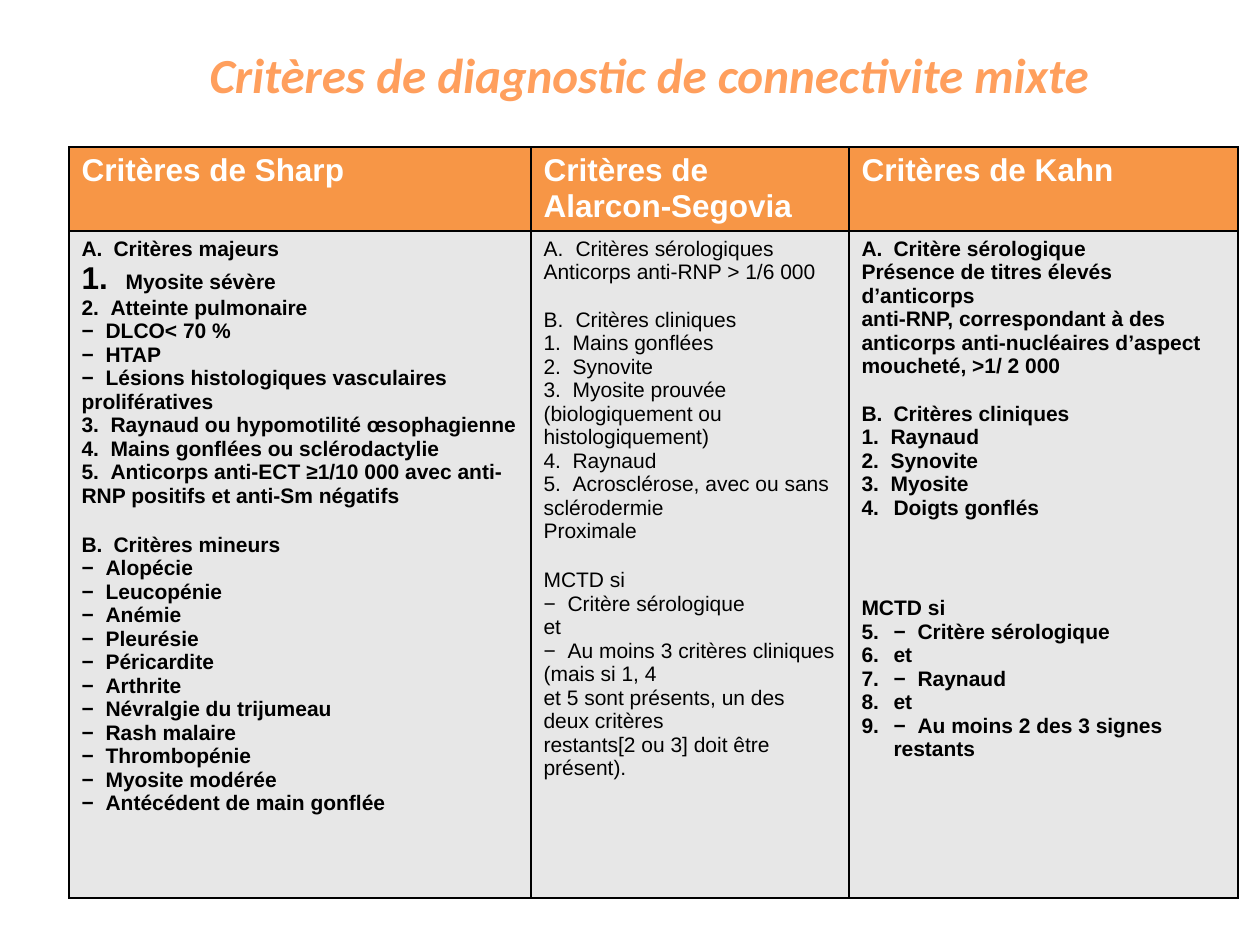
"""Build the slide on diagnostic criteria for mixed connective tissue disease."""
from dataclasses import dataclass

from lxml import etree
from pptx import Presentation, util as u
from pptx.dml.color import RGBColor
from pptx.enum import text as t
from pptx.oxml import ns

SCALE = 914400 / 126
HUES = {"head": "F79646", "body": "E7E7E7", "white": "FFFFFF", "black": "000000",
        "pale": "FFA367", "mid": "FF9F5D", "deep": "F38E3A"}
TABS = {"A.": 32, "B.": 32, "−": 24}


@dataclass
class Line:
    text: str
    mark: str = ""
    gap: float = 0
    size: int = 12
    tab: int = 29
    auto: int = 0


@dataclass
class Column:
    head: str
    width: int
    bold: bool
    lines: list[Line]


def dashes(*names: str) -> list[Line]:
    return [Line(name, "−") for name in names]


def steps(*names: str) -> list[Line]:
    return [Line(name, f"{i}.") for i, name in enumerate(names, 1)]


COLUMNS = [
    Column("Critères de Sharp", 462, True, [
        Line("Critères majeurs", "A."),
        Line("Myosite sévère", "1.", size=18, tab=44),
        Line("Atteinte pulmonaire", "2."),
        *dashes("DLCO< 70 %", "HTAP", "Lésions histologiques vasculaires"),
        Line("prolifératives"),
        Line("Raynaud ou hypomotilité œsophagienne", "3."),
        Line("Mains gonflées ou sclérodactylie", "4."),
        Line("Anticorps anti-ECT ≥1/10 000 avec anti-", "5."),
        Line("RNP positifs et anti-Sm négatifs"),
        Line("Critères mineurs", "B.", gap=14.5),
        *dashes("Alopécie", "Leucopénie", "Anémie", "Pleurésie", "Péricardite",
                "Arthrite", "Névralgie du trijumeau", "Rash malaire",
                "Thrombopénie", "Myosite modérée", "Antécédent de main gonflée"),
    ]),
    Column("Critères de Alarcon-Segovia", 318, False, [
        Line("Critères sérologiques", "A."),
        Line("Anticorps anti-RNP > 1/6 000"),
        Line("Critères cliniques", "B.", gap=13.5),
        *steps("Mains gonflées", "Synovite", "Myosite prouvée (biologiquement ou"),
        Line("histologiquement)"),
        Line("Raynaud", "4."),
        Line("Acrosclérose, avec ou sans sclérodermie", "5."),
        Line("Proximale"),
        Line("MCTD si", gap=14.5),
        Line("Critère sérologique", "−"),
        Line("et"),
        Line("Au moins 3 critères cliniques (mais si 1, 4", "−"),
        Line("et 5 sont présents, un des deux critères"),
        Line("restants[2 ou 3] doit être présent)."),
    ]),
    Column("Critères de Kahn", 389, True, [
        Line("Critère sérologique", "A."),
        Line("Présence de titres élevés d’anticorps"),
        Line("anti-RNP, correspondant à des"),
        Line("anticorps anti-nucléaires d’aspect"),
        Line("moucheté, >1/ 2 000"),
        Line("Critères cliniques", "B.", gap=13.5),
        *steps("Raynaud", "Synovite", "Myosite"),
        Line("Doigts gonflés", auto=4),
        Line("MCTD si", gap=44),
        Line("Critère sérologique", "−", auto=4),
        Line("et", auto=4),
        Line("Raynaud", "−", auto=4),
        Line("et", auto=4),
        Line("Au moins 2 des 3 signes restants", "−", auto=4),
    ]),
]


def px(n: int) -> int:
    return round(n * SCALE)


def add(node, tag: str, **attrs):
    return etree.SubElement(node, ns.qn(tag), {k: str(v) for k, v in attrs.items()})


def write(para, text: str, size=12, face="Arial", hue="black", bold=False, slant=False):
    run = para.add_run()
    run.text = text
    font = run.font
    font.size, font.name, font.bold, font.italic = u.Pt(size), face, bold, slant
    font.color.rgb = RGBColor.from_string(HUES[hue])
    return run


def shade(run) -> None:
    run.font.fill.gradient()
    grad = run.font.fill._xPr.find(ns.qn("a:gradFill"))
    for child in list(grad):
        grad.remove(child)
    stops = add(grad, "a:gsLst")
    for i, hue in enumerate(["pale", "mid", "deep", "mid", "pale"]):
        add(add(stops, "a:gs", pos=i * 25000), "a:srgbClr", val=HUES[hue])
    add(grad, "a:lin", ang=5400000, scaled=0)


def paint(cell, hue: str) -> None:
    props = cell._tc.get_or_add_tcPr()
    for side in "LRTB":
        edge = add(props, f"a:ln{side}", w=u.Pt(1))
        add(add(edge, "a:solidFill"), "a:srgbClr", val=HUES["black"])
    cell.fill.solid()
    cell.fill.fore_color.rgb = RGBColor.from_string(HUES[hue])


def fill(frame, lines: list[Line], bold: bool) -> None:
    for i, line in enumerate(lines):
        para = frame.add_paragraph() if i else frame.paragraphs[0]
        if line.gap:
            para.space_before = u.Pt(line.gap)
        props = para._p.get_or_add_pPr()
        base = 0
        if line.auto:
            base = 32
            props.set("marL", str(px(base)))
            props.set("indent", str(-px(base)))
            add(props, "a:buFont", typeface="+mj-lt")
            add(props, "a:buAutoNum", type="arabicPeriod", startAt=line.auto)
        if line.mark:
            stop = base + TABS.get(line.mark, line.tab)
            add(add(props, "a:tabLst"), "a:tab", pos=px(stop), algn="l")
            write(para, line.mark + "\t", size=line.size, bold=bold)
        write(para, line.text, bold=bold)


def title(slide) -> None:
    box = slide.shapes.title
    box.left, box.top, box.width, box.height = map(px, (197, 38, 926, 72))
    frame = box.text_frame
    frame.word_wrap = False
    frame.auto_size = t.MSO_AUTO_SIZE.NONE
    frame.vertical_anchor = t.MSO_ANCHOR.TOP
    para = frame.paragraphs[0]
    para.alignment = t.PP_ALIGN.LEFT
    shade(write(para, "Critères de diagnostic de connectivite mixte", size=28,
                face="Calibri", hue="mid", bold=True, slant=True))


def grid(slide) -> None:
    wide = sum(col.width for col in COLUMNS)
    table = slide.shapes.add_table(2, len(COLUMNS), *map(px, (69, 147, wide, 751))).table
    table.horz_banding = False
    for row, high in zip(table.rows, (84, 667)):
        row.height = px(high)
    for i, col in enumerate(COLUMNS):
        table.columns[i].width = px(col.width)
        head, body = table.cell(0, i), table.cell(1, i)
        paint(head, "head")
        paint(body, "body")
        write(head.text_frame.paragraphs[0], col.head, size=18, hue="white", bold=True)
        fill(body.text_frame, col.lines, col.bold)


def main() -> None:
    deck = Presentation()
    deck.slide_width, deck.slide_height = px(1260), px(945)
    slide = deck.slides.add_slide(deck.slide_layouts[5])
    grid(slide)
    title(slide)
    deck.save("out.pptx")


if __name__ == "__main__":
    main()
